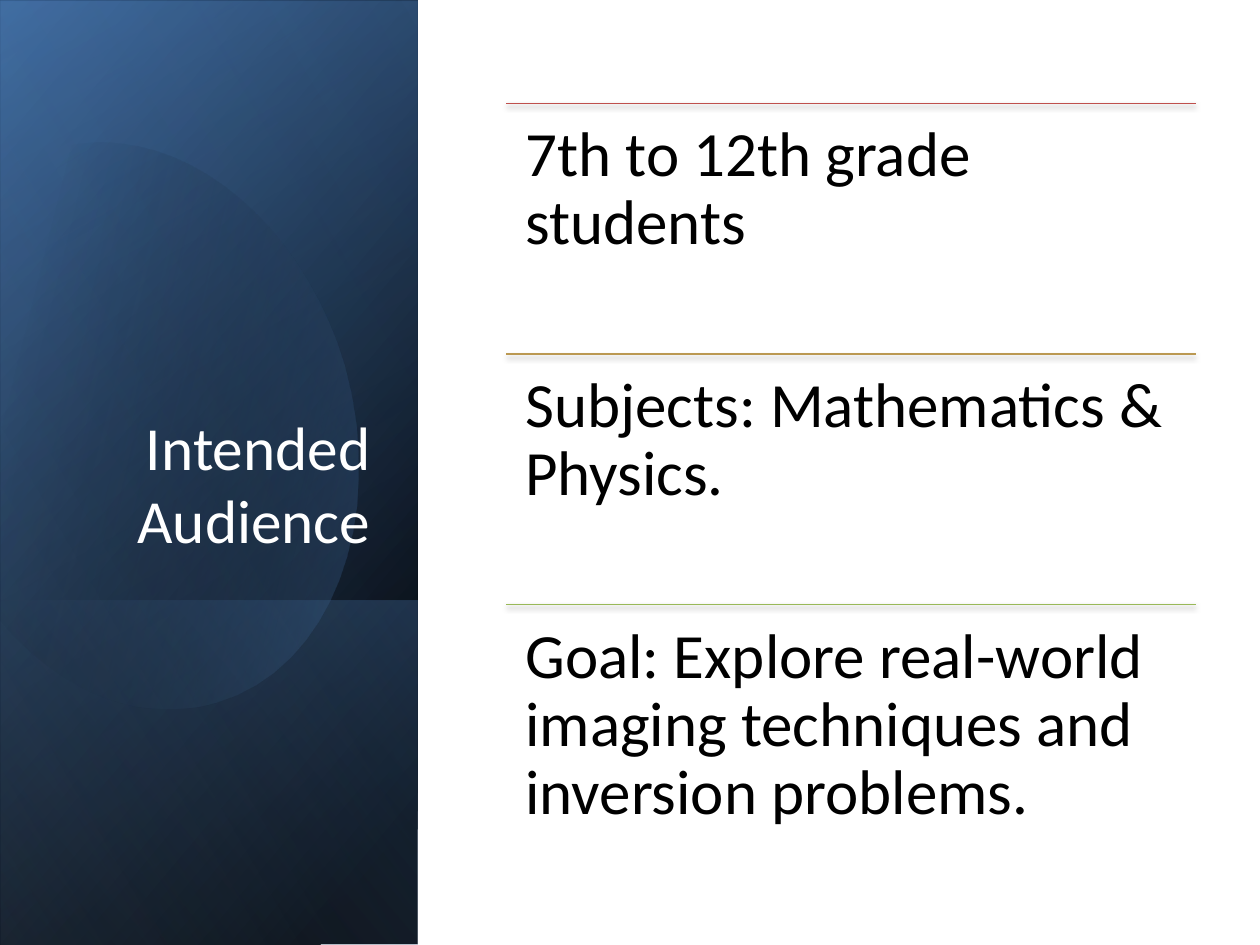
import math

import pptx
import pptx.dml.color
import pptx.enum.shapes
import pptx.enum.text
import pptx.oxml
import pptx.oxml.ns
import pptx.util
from pptx.util import Inches

COLORS = {
    "black": "000000",
    "white": "FFFFFF",
    "navy": "366092",
    "blue": "4F81BD",
    "pale": "93B3D7",
    "red": "BF504D",
    "gold": "BB9952",
    "green": "99B958",
}
FONT = "Calibri"
NAMESPACE = pptx.oxml.ns.nsdecls("a")


def paint_gradient(shape, stops, angle):
    """Fill with (position %, colour, opacity %) stops, without line or shadow."""
    shape.shadow.inherit = False
    shape.line.fill.background()
    shape.fill.gradient()
    stop_xml = "".join(
        f'<a:gs pos="{position * 1000}"><a:srgbClr val="{COLORS[color]}">'
        f'<a:alpha val="{opacity * 1000}"/></a:srgbClr></a:gs>'
        for position, color, opacity in stops
    )
    gradient = pptx.oxml.parse_xml(
        f'<a:gradFill {NAMESPACE} rotWithShape="1"><a:gsLst>{stop_xml}</a:gsLst>'
        f'<a:lin ang="{angle * 60000}" scaled="0"/></a:gradFill>'
    )
    properties = shape._element.spPr
    properties.replace(properties.find(pptx.oxml.ns.qn("a:gradFill")), gradient)


def add_text(box, text, size, color, margins):
    """Add a wrapped text box and return its frame."""
    frame = slide.shapes.add_textbox(*map(Inches, box)).text_frame
    frame.word_wrap = True
    frame.margin_left = frame.margin_right = Inches(margins[0])
    frame.margin_top = frame.margin_bottom = Inches(margins[1])
    paragraph = frame.paragraphs[0]
    paragraph.text = text
    paragraph.font.name = FONT
    paragraph.font.size = pptx.util.Pt(size)
    paragraph.font.color.rgb = pptx.dml.color.RGBColor.from_string(COLORS[color])
    return frame


presentation = pptx.Presentation()
presentation.slide_width = Inches(10)
presentation.slide_height = Inches(7.5)
slide = presentation.slides.add_slide(presentation.slide_layouts[6])

# Side panel: layered gradients, with the curved blob below the last one
PANEL = (-2.09, 2.09, 7.5, 3.31)
layers = [
    (PANEL, [(0, "black", 100), (8, "black", 100), (100, "navy", 100)], 50),
    ((-2.09, 2.11, 7.5, 3.31),
     [(0, "black", 0), (99, "blue", 46), (100, "blue", 46)], 30),
    ((0.29, 4.48, 2.74, 3.31),
     [(0, "blue", 29), (2, "blue", 29), (100, "black", 30)], 130),
    ("blob", [(0, "black", 0), (29, "black", 0), (100, "blue", 43)], 30),
    (PANEL, [(0, "black", 0), (99, "pale", 11), (100, "pale", 11)], 120),
]

# Blob outline as it lies on the slide: start, then cubic curves or line ends
BLOB_TILT = 16.1
BLOB_CENTER = (1.19, 3.35)
blob_start = (0.96, 1.14)
blob_segments = [
    [(1.71, 1.22), (2.44, 1.92), (2.73, 2.9)],
    [(3.07, 4.12), (2.62, 5.31), (1.71, 5.57)],
    [(1.14, 5.74), (0.53, 5.5), (0.07, 5)],
    [(-0.03, 4.88)],
    [(-0.25, 1.66)],
    [(-0.15, 1.54)],
    [(0.02, 1.37), (0.22, 1.25), (0.45, 1.18)],
    [(0.62, 1.13), (0.79, 1.12), (0.96, 1.14)],
]
CURVE_STEPS = 16
outline = [blob_start]
for segment in blob_segments:
    if len(segment) == 1:
        outline += segment
        continue
    controls = [outline[-1], *segment]
    for step in range(1, CURVE_STEPS + 1):
        t = step / CURVE_STEPS
        weights = [math.comb(3, i) * t**i * (1 - t) ** (3 - i) for i in range(4)]
        outline.append(tuple(
            sum(weight * point[axis] for weight, point in zip(weights, controls))
            for axis in (0, 1)
        ))

# Turn the outline upright, so that the shape's rotation tilts it back
cosine, sine = math.cos(math.radians(BLOB_TILT)), math.sin(math.radians(BLOB_TILT))
upright = []
for x, y in outline:
    dx, dy = x - BLOB_CENTER[0], y - BLOB_CENTER[1]
    upright.append((Inches(BLOB_CENTER[0] + dx * cosine - dy * sine),
                    Inches(BLOB_CENTER[1] + dx * sine + dy * cosine)))

for box, stops, angle in layers:
    if box == "blob":
        builder = slide.shapes.build_freeform(*upright[0])
        builder.add_line_segments(upright[1:], close=True)
        shape = builder.convert_to_shape()
        shape.rotation = 360 - BLOB_TILT
    else:
        shape = slide.shapes.add_shape(
            pptx.enum.shapes.MSO_SHAPE.RECTANGLE, *map(Inches, box))
        shape.rotation = 90
        shape._element.spPr.xfrm.set("flipH", "1")
    paint_gradient(shape, stops, angle)

# Title
title = add_text((0.48, 1.84, 2.56, 2.62), "Intended Audience", 35, "white", (0.1, 0.05))
title.vertical_anchor = pptx.enum.text.MSO_ANCHOR.BOTTOM
title.paragraphs[0].alignment = pptx.enum.text.PP_ALIGN.RIGHT

# Ruled list
LIST_LEFT, LIST_TOP, LIST_WIDTH, ROW_HEIGHT = 4.02, 0.82, 5.47, 1.99
rows = [
    ("7th to 12th grade students", "red"),
    ("Subjects: Mathematics & Physics.", "gold"),
    ("Goal: Explore real-world imaging techniques and inversion problems.", "green"),
]
for index, (text, color) in enumerate(rows):
    top = LIST_TOP + index * ROW_HEIGHT
    rule = slide.shapes.add_connector(
        pptx.enum.shapes.MSO_CONNECTOR.STRAIGHT,
        Inches(LIST_LEFT), Inches(top), Inches(LIST_LEFT + LIST_WIDTH), Inches(top))
    rule.line.color.rgb = pptx.dml.color.RGBColor.from_string(COLORS[color])
    rule.line.width = pptx.util.Pt(0.75)
    rule._element.spPr.append(pptx.oxml.parse_xml(
        f'<a:effectLst {NAMESPACE}><a:outerShdw blurRad="{pptx.util.Pt(3.1)}" '
        f'dist="{pptx.util.Pt(1.8)}" dir="5400000" rotWithShape="0">'
        f'<a:srgbClr val="{COLORS["black"]}"><a:alpha val="35000"/></a:srgbClr>'
        '</a:outerShdw></a:effectLst>'))
    item = add_text((LIST_LEFT, top, LIST_WIDTH, ROW_HEIGHT), text, 36, "black", (0.15, 0.15))
    item.paragraphs[0].line_spacing = 0.9

presentation.save("out.pptx")
